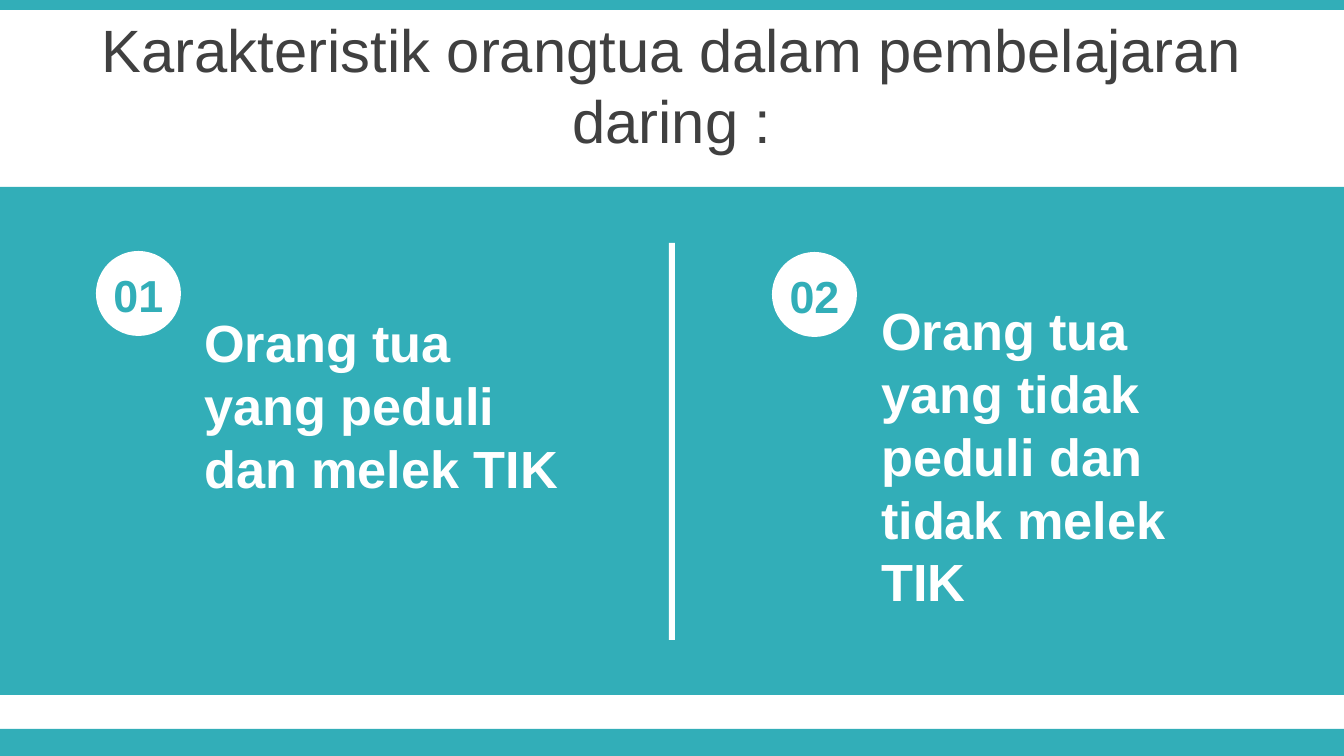
import pptx
import pptx.util
import pptx.dml.color
import pptx.enum.shapes
import pptx.enum.text

PX = 914400 / 134.4
W, H = 1344, 756
TEAL, WHITE, GREY = "32AEB8", "FFFFFF", "404040"
CIRCLE = 85
NUMBER_W, NUMBER_H = 94, 67

TITLE = "Karakteristik orangtua dalam pembelajaran daring :"
BANDS = [(0, 729, W, 27), (0, 0, W, 10), (0, 187, W, 508)]
DIVIDER = (669, 243, 6, 397)
POINTS = [
    ("01", (96, 251), "Orang tua yang peduli dan melek TIK", (191, 304, 391, 203)),
    ("02", (772, 252), "Orang tua yang tidak peduli dan tidak melek TIK", (868, 292, 391, 331)),
]

SHAPE = pptx.enum.shapes.MSO_SHAPE
ALIGN = pptx.enum.text.PP_ALIGN
ANCHOR = pptx.enum.text.MSO_ANCHOR


def emu(box):
    return [pptx.util.Emu(round(v * PX)) for v in box]


def rgb(color):
    return pptx.dml.color.RGBColor.from_string(color)


def add_block(slide, kind, box, color):
    sp = slide.shapes.add_shape(kind, *emu(box))
    sp.shadow.inherit = False
    sp.fill.solid()
    sp.fill.fore_color.rgb = rgb(color)
    sp.line.fill.background()


def write(sp, text, size, color, bold=False, align=ALIGN.LEFT, anchor=ANCHOR.TOP, before=0):
    tf = sp.text_frame
    tf.word_wrap = True
    tf.auto_size = pptx.enum.text.MSO_AUTO_SIZE.NONE
    tf.vertical_anchor = anchor
    p = tf.paragraphs[0]
    p.alignment = align
    p.space_before = pptx.util.Pt(before)
    r = p.add_run()
    r.text = text
    r.font.name = "Arial"
    r.font.size = pptx.util.Pt(size)
    r.font.bold = bold
    r.font.color.rgb = rgb(color)


def main():
    prs = pptx.Presentation()
    prs.slide_width, prs.slide_height = emu((W, H))
    s = prs.slides.add_slide(prs.slide_layouts[5])

    title = s.shapes.title
    title.left, title.top, title.width, title.height = emu((0, 42, W, 84))
    write(title, TITLE, 32, GREY, align=ALIGN.CENTER, anchor=ANCHOR.MIDDLE, before=6)

    for band in BANDS:
        add_block(s, SHAPE.RECTANGLE, band, TEAL)
    add_block(s, SHAPE.RECTANGLE, DIVIDER, WHITE)

    for number, (x, y), text, box in POINTS:
        add_block(s, SHAPE.OVAL, (x, y, CIRCLE, CIRCLE), WHITE)
        number_box = (x + (CIRCLE - NUMBER_W) / 2, y + 10, NUMBER_W, NUMBER_H)
        write(s.shapes.add_textbox(*emu(number_box)), number, 24, TEAL, bold=True, align=ALIGN.CENTER)
        write(s.shapes.add_textbox(*emu(box)), text, 28, WHITE, bold=True)

    prs.save("out.pptx")


if __name__ == "__main__":
    main()
